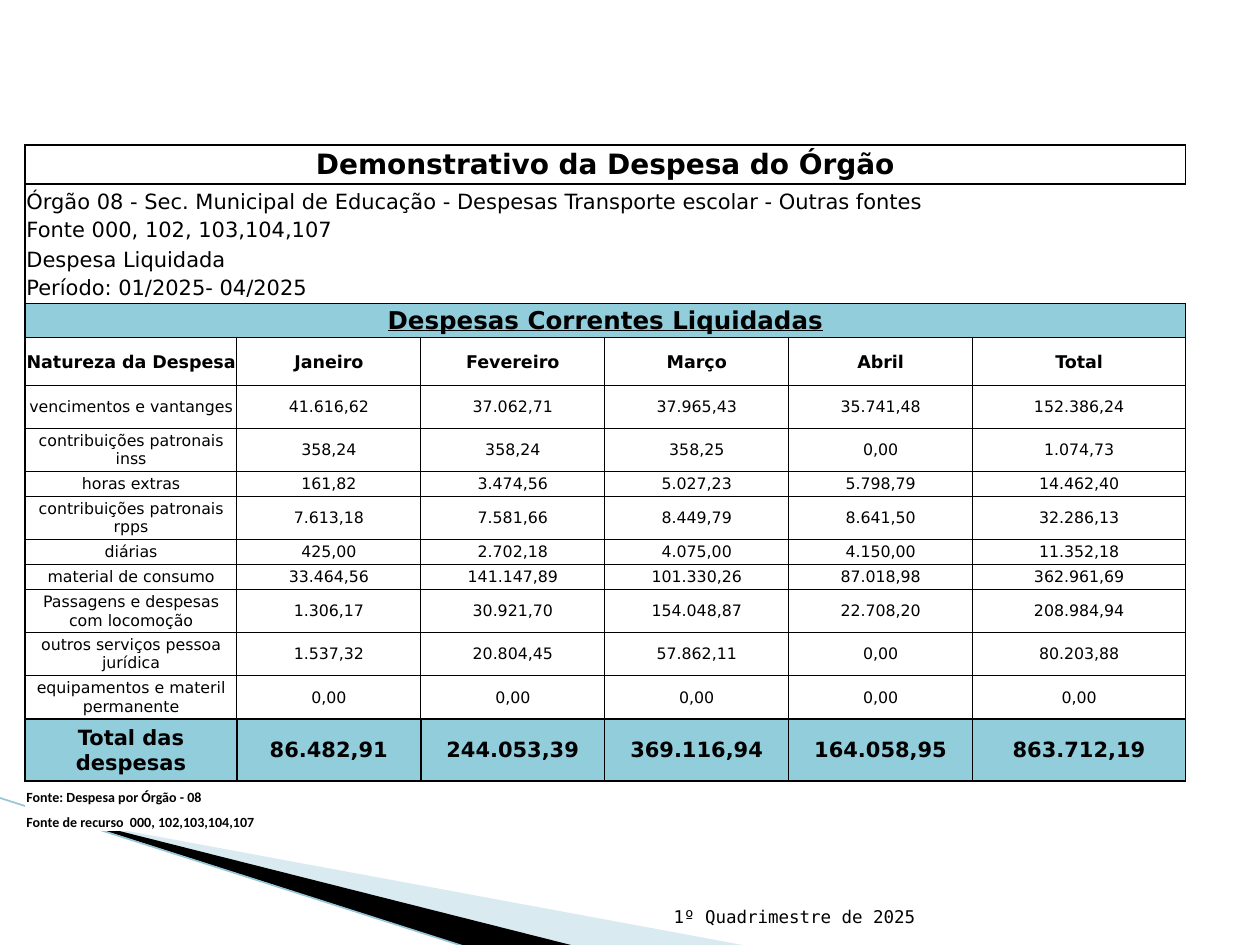
from lxml.etree import SubElement
from pptx import Presentation
from pptx.dml.color import RGBColor
from pptx.enum.shapes import MSO_CONNECTOR
from pptx.enum.text import MSO_ANCHOR, PP_ALIGN
from pptx.oxml import parse_xml
from pptx.oxml.ns import nsdecls, qn
from pptx.util import Inches, Pt

COLORS = {"ink": "000000", "paper": "FFFFFF", "band": "92CDDC", "wave": "A0CBDC", "edge": "97C5D8"}
COLUMN_WIDTHS = [1.68, 1.46, 1.46, 1.46, 1.46, 1.69]
MONTHS = ["Natureza da Despesa", "Janeiro", "Fevereiro", "Março", "Abril", "Total"]
EXPENSES = [
    (0.34, ["vencimentos e vantanges", "41.616,62", "37.062,71", "37.965,43", "35.741,48", "152.386,24"]),
    (0.34, ["contribuições patronais inss", "358,24", "358,24", "358,25", "0,00", "1.074,73"]),
    (0.2, ["horas extras", "161,82", "3.474,56", "5.027,23", "5.798,79", "14.462,40"]),
    (0.34, ["contribuições patronais rpps", "7.613,18", "7.581,66", "8.449,79", "8.641,50", "32.286,13"]),
    (0.2, ["diárias", "425,00", "2.702,18", "4.075,00", "4.150,00", "11.352,18"]),
    (0.2, ["material de consumo", "33.464,56", "141.147,89", "101.330,26", "87.018,98", "362.961,69"]),
    (0.34, ["Passagens e despesas com locomoção", "1.306,17", "30.921,70", "154.048,87", "22.708,20",
            "208.984,94"]),
    (0.34, ["outros serviços pessoa jurídica", "1.537,32", "20.804,45", "57.862,11", "0,00", "80.203,88"]),
    (0.35, ["equipamentos e materil permanente", "0,00", "0,00", "0,00", "0,00", "0,00"]),
]
TOTALS = ["Total das despesas", "86.482,91", "244.053,39", "369.116,94", "164.058,95", "863.712,19"]


def row(height, texts, size, span=1, bold=False, underline=False, fill="paper", font="DejaVu Sans",
        align=PP_ALIGN.CENTER, anchor=MSO_ANCHOR.MIDDLE, outer=(1, 1), inner=0.5, top=0.5, bottom=0.5):
    return dict(height=height, texts=texts, size=size, span=span, bold=bold, underline=underline, fill=fill,
                font=font, align=align, anchor=anchor, outer=outer, inner=inner, top=top, bottom=bottom)


def heading(height, text, size, **style):
    return row(height, [text], size, span=6, bold=True, inner=1, top=1, bottom=1, **style)


def detail(height, text, anchor=MSO_ANCHOR.MIDDLE, top=0, bottom=0):
    return row(height, [text], 12, span=6, align=PP_ALIGN.LEFT, anchor=anchor, inner=0, top=top, bottom=bottom)


def footnote(text, span, top):
    return row(0.2, [text], 8, span=span, bold=True, font="Calibri", align=PP_ALIGN.LEFT,
               anchor=MSO_ANCHOR.BOTTOM, outer=(0, 0), inner=0, top=top, bottom=0)


class SlideBuilder:
    def __init__(self, slide, colors):
        self.slide = slide
        self.colors = colors

    def color(self, name):
        return RGBColor.from_string(self.colors[name])

    def style_run(self, run, size, font, bold=False, underline=False):
        run.font.size = Pt(size)
        run.font.name = font
        run.font.bold = bold
        run.font.underline = underline
        run.font.color.rgb = self.color("ink")

    def wedge(self, points, fill, opacity=100):
        corners = [(Inches(x), Inches(y)) for x, y in points]
        builder = self.slide.shapes.build_freeform(*corners[0], scale=1.0)
        builder.add_line_segments(corners[1:], close=True)
        shape = builder.convert_to_shape()
        shape.shadow.inherit = False
        shape.fill.solid()
        shape.fill.fore_color.rgb = self.color(fill)
        shape.line.fill.background()
        if opacity < 100:
            tone = shape.fill._xPr.find(".//" + qn("a:srgbClr"))
            SubElement(tone, qn("a:alpha"), val=str(opacity * 1000))

    def line(self, start, end, color, width):
        ends = [Inches(value) for value in (*start, *end)]
        connector = self.slide.shapes.add_connector(MSO_CONNECTOR.STRAIGHT, *ends)
        connector.line.color.rgb = self.color(color)
        connector.line.width = Pt(width)
        SubElement(connector._element.spPr, qn("a:effectLst"))

    def text(self, left, top, width, height, words, size, font):
        box = self.slide.shapes.add_textbox(Inches(left), Inches(top), Inches(width), Inches(height))
        frame = box.text_frame
        frame.word_wrap = True
        frame.vertical_anchor = MSO_ANCHOR.BOTTOM
        frame.text = words
        frame.paragraphs[0].alignment = PP_ALIGN.RIGHT
        self.style_run(frame.paragraphs[0].runs[0], size, font)

    def borders(self, cell, widths):
        properties = cell._tc.get_or_add_tcPr()
        for position, (side, width) in enumerate(zip("LRTB", widths)):
            paint = f'<a:solidFill><a:srgbClr val="{self.colors["ink"]}"/></a:solidFill>' if width else "<a:noFill/>"
            edge = f'<a:ln{side} {nsdecls("a")} w="{Pt(width)}">{paint}</a:ln{side}>'
            properties.insert(position, parse_xml(edge))

    def cell(self, cell, words, style):
        cell.margin_left = cell.margin_right = cell.margin_top = Inches(0.01)
        cell.margin_bottom = 0
        cell.vertical_anchor = style["anchor"]
        cell.fill.solid()
        cell.fill.fore_color.rgb = self.color(style["fill"])
        cell.text_frame.text = words
        paragraph = cell.text_frame.paragraphs[0]
        paragraph.alignment = style["align"]
        for run in paragraph.runs:
            self.style_run(run, style["size"], style["font"], style["bold"], style["underline"])
        if not words:
            SubElement(paragraph._p, qn("a:endParaRPr"), sz=str(style["size"] * 100))

    def table(self, left, top, widths, rows):
        height = sum(style["height"] for style in rows)
        frame = self.slide.shapes.add_table(len(rows), len(widths), Inches(left), Inches(top),
                                            Inches(sum(widths)), Inches(height))
        table = frame.table
        table.first_row = table.horz_banding = False
        for column, width in zip(table.columns, widths):
            column.width = Inches(width)
        last = len(widths) - 1
        for r, style in enumerate(rows):
            table.rows[r].height = Inches(style["height"])
            for c in range(len(widths)):
                words = style["texts"][c] if c < len(style["texts"]) else ""
                cell = table.cell(r, c)
                self.cell(cell, words, style)
                left_width = style["outer"][0] if c == 0 else style["inner"]
                right_width = style["outer"][1] if c == last else style["inner"]
                self.borders(cell, (left_width, right_width, style["top"], style["bottom"]))
            if style["span"] > 1:
                table.cell(r, 0).merge(table.cell(r, style["span"] - 1))


def main():
    deck = Presentation()
    deck.slide_width, deck.slide_height = Inches(10), Inches(7.5)
    builder = SlideBuilder(deck.slides.add_slide(deck.slide_layouts[6]), COLORS)

    builder.wedge([(0.55, 6.51), (5.95, 7.51), (4.56, 7.51), (0.55, 6.5)], "wave", 40)
    builder.wedge([(0.53, 6.49), (4.57, 7.51), (3.72, 7.52), (0.54, 6.5)], "ink")
    builder.line((-0.01, 6.33), (3.71, 7.52), "edge", 0.95)
    builder.text(4.79, 7.01, 2.57, 0.4, "1º Quadrimestre de 2025", 10, "DejaVu Sans Mono")

    final = len(EXPENSES) - 1
    expense_rows = [row(height, texts, 9, outer=(1, 0.5), bottom=1 if i == final else 0.5)
                    for i, (height, texts) in enumerate(EXPENSES)]
    builder.table(0.2, 1.15, COLUMN_WIDTHS, [
        heading(0.31, "Demonstrativo da Despesa do Órgão", 16),
        detail(0.24, "Órgão 08 - Sec. Municipal de Educação - Despesas Transporte escolar - Outras fontes",
               MSO_ANCHOR.BOTTOM, top=1),
        detail(0.24, "Fonte 000, 102, 103,104,107"),
        detail(0.24, "Despesa Liquidada"),
        detail(0.23, "Período: 01/2025- 04/2025", MSO_ANCHOR.TOP, bottom=1),
        heading(0.27, "Despesas Correntes Liquidadas", 14, underline=True, fill="band"),
        row(0.38, MONTHS, 10, bold=True, top=1),
        *expense_rows,
        row(0.49, TOTALS, 12, bold=True, fill="band", inner=1, top=1, bottom=1),
        footnote("Fonte: Despesa por Órgão - 08", 1, top=1),
        footnote("Fonte de recurso  000, 102,103,104,107", 2, top=0),
    ])
    deck.save("out.pptx")


if __name__ == "__main__":
    main()
